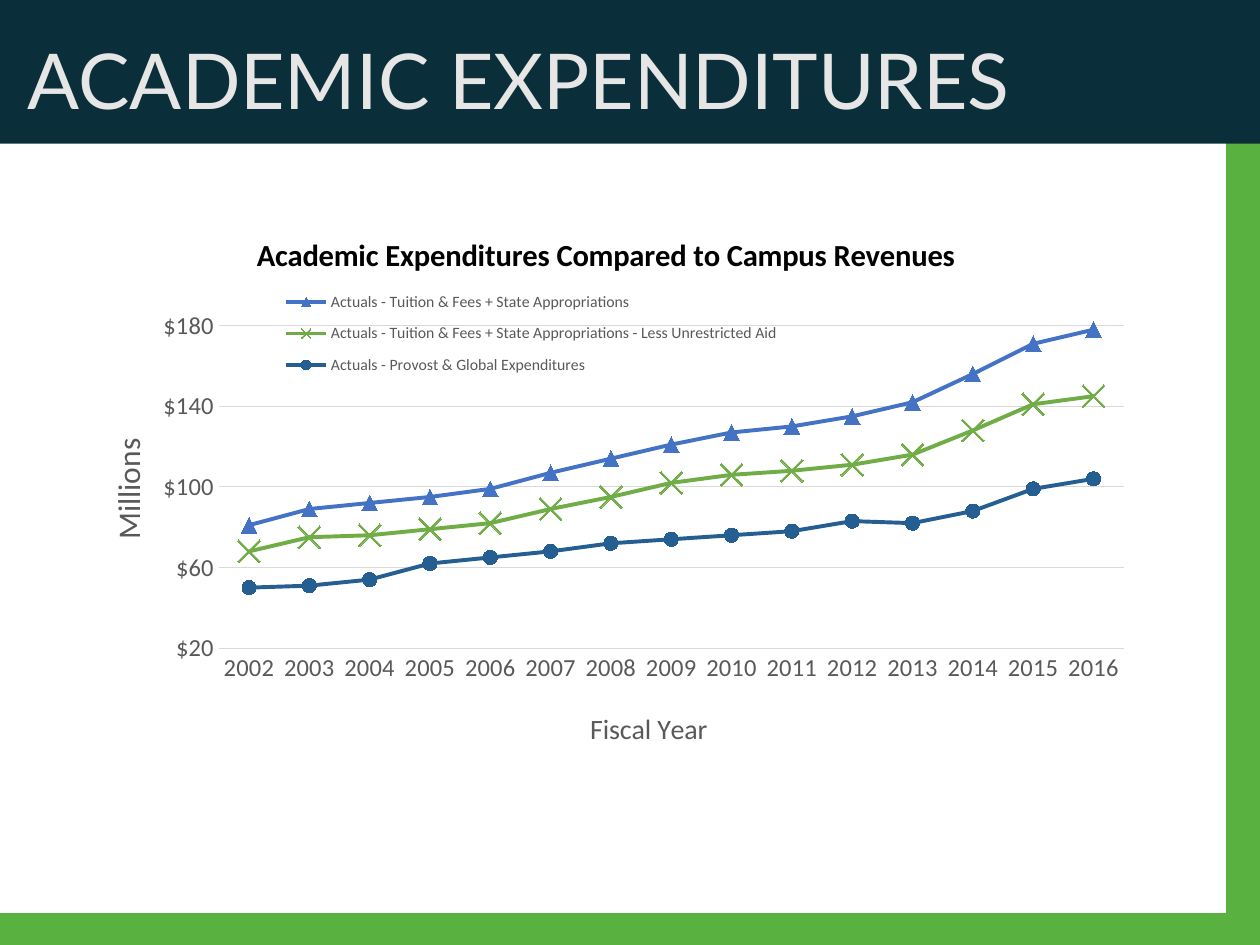
from dataclasses import dataclass

from lxml import etree
from pptx import Presentation
from pptx.chart.data import CategoryChartData
from pptx.dml.color import RGBColor
from pptx.enum.chart import XL_CHART_TYPE, XL_LEGEND_POSITION, XL_MARKER_STYLE, XL_TICK_MARK
from pptx.enum.shapes import MSO_SHAPE
from pptx.enum.text import MSO_ANCHOR, MSO_AUTO_SIZE, PP_ALIGN
from pptx.oxml.ns import qn
from pptx.util import Inches, Pt

CORNER, RECTANGLE = MSO_SHAPE.CORNER, MSO_SHAPE.RECTANGLE
LINE_MARKERS = XL_CHART_TYPE.LINE_MARKERS
LEGEND_LEFT = XL_LEGEND_POSITION.LEFT
TRIANGLE, CROSS, CIRCLE = XL_MARKER_STYLE.TRIANGLE, XL_MARKER_STYLE.X, XL_MARKER_STYLE.CIRCLE
NO_TICK = XL_TICK_MARK.NONE
MILLION = 1_000_000


@dataclass(frozen=True)
class Theme:
    band: RGBColor = RGBColor.from_string("0B2F3A")
    frame: RGBColor = RGBColor.from_string("59B23F")
    heading: RGBColor = RGBColor.from_string("E7E6E6")
    ink: RGBColor = RGBColor.from_string("000000")
    muted: RGBColor = RGBColor.from_string("595959")
    grid: RGBColor = RGBColor.from_string("D9D9D9")
    revenue: RGBColor = RGBColor.from_string("4472C4")
    net_revenue: RGBColor = RGBColor.from_string("70AD47")
    spending: RGBColor = RGBColor.from_string("255E91")
    heading_font: str = "Lato"
    chart_font: str = "Calibri"
    heading_size: float = 44
    chart_title_size: float = 17.5
    value_title_size: float = 18
    category_title_size: float = 16
    tick_size: float = 14
    legend_size: float = 9
    chart_size: float = 10


THEME = Theme()

YEARS = [str(year) for year in range(2002, 2017)]
# Name, values in millions, colour, marker style, marker size
SERIES = [
    ("Actuals - Tuition & Fees + State Appropriations",
     [81, 89, 92, 95, 99, 107, 114, 121, 127, 130, 135, 142, 156, 171, 178],
     THEME.revenue, TRIANGLE, 9),
    ("Actuals - Tuition & Fees + State Appropriations - Less Unrestricted Aid",
     [68, 75, 76, 79, 82, 89, 95, 102, 106, 108, 111, 116, 128, 141, 145],
     THEME.net_revenue, CROSS, 13),
    ("Actuals - Provost & Global Expenditures",
     [50, 51, 54, 62, 65, 68, 72, 74, 76, 78, 83, 82, 88, 99, 104],
     THEME.spending, CIRCLE, 8),
]


def set_font(font, name, size, color, bold=False):
    font.name, font.size, font.bold = name, Pt(size), bold
    font.color.rgb = color


def set_layout(parent, after, inner=False, **fractions):
    """Place a chart part by fractions of the chart's width and height."""
    for old in parent.findall(qn("c:layout")):
        parent.remove(old)
    layout = etree.Element(qn("c:layout"))
    manual = etree.SubElement(layout, qn("c:manualLayout"))
    if inner:
        etree.SubElement(manual, qn("c:layoutTarget")).set("val", "inner")
    for key in ("x", "y"):
        etree.SubElement(manual, qn(f"c:{key}Mode")).set("val", "edge")
    for key, value in fractions.items():
        etree.SubElement(manual, qn(f"c:{key}")).set("val", str(value))
    if after is None:
        parent.insert(0, layout)
    else:
        parent.find(qn(after)).addnext(layout)


def add_title(title, text, size, color, x, y, bold=False, rotation=0):
    """Write and place the title of a chart or an axis."""
    frame = title.text_frame
    frame.text = text
    set_font(frame.paragraphs[0].font, THEME.chart_font, size, color, bold)
    frame._txBody.bodyPr.set("rot", str(rotation * 60000))
    set_layout(title._element, "c:tx", x=x, y=y)


def add_block(page, kind, color, left, top, width, height):
    block = page.shapes.add_shape(kind, left, top, width, height)
    block.shadow.inherit = False
    block.fill.solid()
    block.fill.fore_color.rgb = color
    block.line.fill.background()
    return block


def add_backdrop(page, width, height):
    # Green edge along the bottom and right
    edge = add_block(page, CORNER, THEME.frame, 0, 0, width, height)
    edge.adjustments[0], edge.adjustments[1] = 0.035, 0.037
    edge._element.spPr.xfrm.set("flipH", "1")
    # Dark header band
    add_block(page, RECTANGLE, THEME.band, 0, Inches(-0.05), width, Inches(1.19))


def place_heading(page, text, left, top, width, height):
    heading = page.shapes.title
    page.shapes._spTree.append(heading._element)  # in front of the band
    heading.left, heading.top, heading.width, heading.height = left, top, width, height
    frame = heading.text_frame
    frame.text = text
    frame.word_wrap = True
    frame.auto_size = MSO_AUTO_SIZE.NONE
    frame.vertical_anchor = MSO_ANCHOR.TOP
    para = frame.paragraphs[0]
    para.alignment = PP_ALIGN.LEFT
    set_font(para.font, THEME.heading_font, THEME.heading_size, THEME.heading)


def style_axes(chart):
    years, dollars = chart.category_axis, chart.value_axis
    for axis in (years, dollars):
        axis.major_tick_mark = axis.minor_tick_mark = NO_TICK
        set_font(axis.tick_labels.font, THEME.chart_font, THEME.tick_size, THEME.muted)
    for line in (years.format.line, dollars.major_gridlines.format.line):
        line.color.rgb = THEME.grid
        line.width = Pt(0.75)
    add_title(years.axis_title, "Fiscal Year", THEME.category_title_size, THEME.muted, 0.48, 0.89)

    dollars.minimum_scale, dollars.maximum_scale = 20 * MILLION, 200 * MILLION
    dollars.major_unit = 40 * MILLION
    dollars.format.line.fill.background()
    dollars.tick_labels.number_format = '"$"###,,'
    dollars.tick_labels.number_format_is_linked = False
    add_title(dollars.axis_title, "Millions", THEME.value_title_size, THEME.muted,
              0.03, 0.41, rotation=-90)


def style_series(chart):
    for line, (_, _, color, style, size) in zip(chart.plots[0].series, SERIES):
        line.smooth = False
        line.format.line.color.rgb = color
        line.format.line.width = Pt(2.25)
        marker = line.marker
        marker.style, marker.size = style, size
        marker.format.line.color.rgb = color
        if style == CROSS:
            marker.format.fill.background()
        else:
            marker.format.fill.solid()
            marker.format.fill.fore_color.rgb = color


def add_expenditure_chart(page, left, top, width, height):
    data = CategoryChartData()
    data.categories = YEARS
    for name, millions, *_ in SERIES:
        data.add_series(name, [value * MILLION for value in millions])
    chart = page.shapes.add_chart(LINE_MARKERS, left, top, width, height, data).chart
    set_font(chart.font, THEME.chart_font, THEME.chart_size, THEME.ink)
    chart.plots[0].vary_by_categories = False
    add_title(chart.chart_title, "Academic Expenditures Compared to Campus Revenues",
              THEME.chart_title_size, THEME.ink, 0.17, 0.05, bold=True)
    style_axes(chart)
    style_series(chart)
    # Legend lies over the upper left of the plot
    chart.has_legend = True
    legend = chart.legend
    legend.position = LEGEND_LEFT
    legend.include_in_layout = True
    set_font(legend.font, THEME.chart_font, THEME.legend_size, THEME.muted)
    set_layout(legend._element, "c:legendPos", x=0.18, y=0.14, w=0.5, h=0.19)
    plot_area = chart._chartSpace.chart.plotArea
    set_layout(plot_area, None, inner=True, x=0.14, y=0.15, w=0.84, h=0.64)


def main():
    deck = Presentation()
    deck.slide_width, deck.slide_height = Inches(10), Inches(7.5)
    page = deck.slides.add_slide(deck.slide_layouts[5])
    add_backdrop(page, Inches(10.01), Inches(7.51))
    place_heading(page, "ACADEMIC EXPENDITURES",
                  Inches(0.12), Inches(0.21), Inches(9.15), Inches(0.94))
    add_expenditure_chart(page, Inches(0.54), Inches(1.59), Inches(8.55), Inches(4.5))
    deck.save("out.pptx")


if __name__ == "__main__":
    main()
